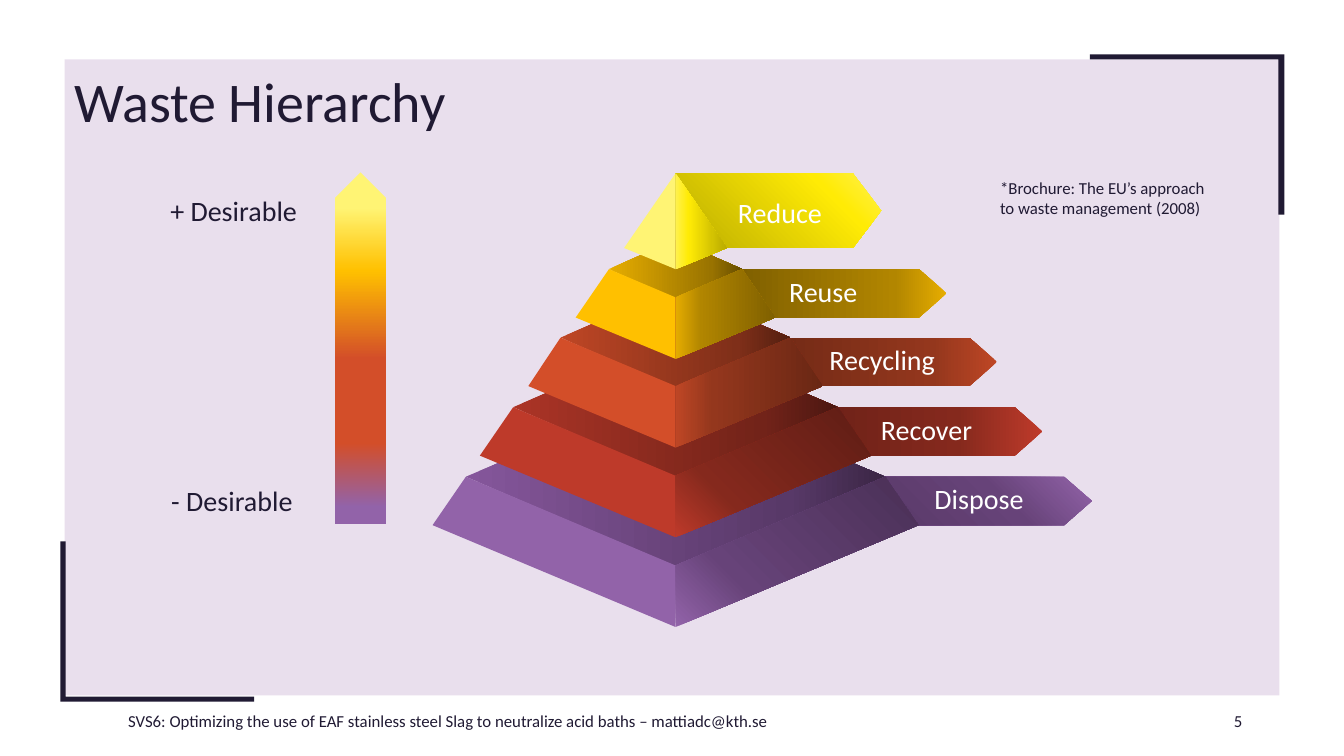
from dataclasses import dataclass

from lxml import etree
from pptx import Presentation
from pptx.dml.color import RGBColor
from pptx.enum.shapes import MSO_SHAPE
from pptx.enum.text import MSO_ANCHOR, MSO_AUTO_SIZE, PP_ALIGN
from pptx.oxml.ns import qn
from pptx.util import Inches, Pt

RECTANGLE, PENTAGON = MSO_SHAPE.RECTANGLE, MSO_SHAPE.PENTAGON
LEFT, CENTER, RIGHT = PP_ALIGN.LEFT, PP_ALIGN.CENTER, PP_ALIGN.RIGHT
TOP, MIDDLE = MSO_ANCHOR.TOP, MSO_ANCHOR.MIDDLE
GROW, FIXED = MSO_AUTO_SIZE.SHAPE_TO_FIT_TEXT, MSO_AUTO_SIZE.NONE

INK, WHITE, PURPLE = "201A33", "FFFFFF", "9263A9"
AXIS = 6.7  # horizontal centre of the pyramid

Point = tuple[float, float]
Box = tuple[float, float, float, float]


@dataclass
class Gradient:
    stops: list[tuple[int, str]]
    angle: int = 0  # clockwise degrees

    def turned(self, angle: int) -> "Gradient":
        return Gradient(self.stops, angle)


@dataclass
class Tier:
    name: str
    front: str
    side: Gradient
    lid: Gradient | None
    plate_angle: int
    plate: tuple[float, float, float]  # left, width, point adjustment
    label: tuple[float, float, float]  # left, top, width
    half_top: float
    half_base: float
    edge: float  # height of the upper outer corners
    rise: float  # drop from upper to lower outer corners
    back: float  # rear corner of the lid
    ridge: float  # upper end of the centre ridge
    foot: float  # lower end of the centre ridge


@dataclass
class Caption:
    lines: list[str]
    box: Box
    size: int
    align: PP_ALIGN = LEFT
    color: str = INK
    anchor: MSO_ANCHOR = TOP
    wrap: bool = False
    fit: MSO_AUTO_SIZE = GROW


TIERS = [
    Tier("Reduce", "FFF474", Gradient([(0, "FFF14F"), (25, "FFEB05"), (100, "BAAB00")]), None,
         135, (6.7, 2.04, 0.379), (7.21, 1.89, 1.05),
         0, 0.51, 1.72, 0.74, 1.72, 1.72, 2.67),
    Tier("Reuse", "FFC000", Gradient([(0, "E6AD00"), (25, "B28600"), (100, "806000")]),
         Gradient([(0, "E6AD00"), (77, "997300"), (100, "664D00")]),
         180, (7.35, 2.04, 0.575), (7.65, 2.67, 1.03),
         0.66, 0.99, 2.67, 0.48, 2.38, 2.95, 3.56),
    Tier("Recycling", "D34E29", Gradient([(0, "BE4625"), (25, "94371D"), (100, "6A2714")]),
         Gradient([(0, "BE4625"), (77, "7F2F19"), (100, "541F10")]),
         180, (7.35, 2.54, 0.575), (8.12, 3.35, 1.26),
         1.14, 1.46, 3.35, 0.48, 2.86, 3.83, 4.44),
    Tier("Recover", "BE3A2A", Gradient([(0, "BE3A2A"), (28, "85291D"), (100, "5F1D15")], 315),
         Gradient([(0, "AB3426"), (77, "722319"), (100, "4C1711")]),
         180, (7.35, 2.99, 0.575), (8.56, 4.04, 1.26),
         1.61, 1.94, 4.04, 0.48, 3.35, 4.72, 5.33),
    Tier("Dispose", PURPLE, Gradient([(0, PURPLE), (28, "674379"), (100, "4A3056")], 315),
         Gradient([(0, "85569B"), (77, "583968"), (100, "3B2645")]),
         135, (7.35, 3.48, 0.575), (9.11, 4.73, 1.2),
         2.08, 2.41, 4.73, 0.48, 3.85, 5.61, 6.22),
]

SCALE = Gradient([(10, "FFF474"), (28, "FFC000"), (53, "D34E29"), (77, "D34E29"), (95, PURPLE)], 180)

CORNERS = [
    [(12.74, 0.54), (10.81, 0.54), (10.81, 0.59), (12.68, 0.59), (12.68, 2.13), (12.74, 2.13)],
    [(0.6, 6.96), (2.52, 6.96), (2.52, 6.91), (0.65, 6.91), (0.65, 5.37), (0.6, 5.37)],
]

CAPTIONS = [
    Caption(["SVS6: Optimizing the use of EAF stainless steel Slag to neutralize acid baths – mattiadc@kth.se"],
            (0.92, 6.95, 7.05, 0.4), 12, CENTER, anchor=MIDDLE, wrap=True, fit=FIXED),
    Caption(["5"], (11.53, 6.95, 0.89, 0.4), 12, RIGHT, anchor=MIDDLE, wrap=True, fit=FIXED),
    Caption(["Waste Hierarchy"], (0.64, 0.61, 4.04, 0.77), 40),
    Caption(["+ Desirable"], (1.59, 1.87, 1.52, 0.44), 20),
    Caption(["- Desirable"], (1.6, 4.75, 1.45, 0.44), 20),
    Caption(["*Brochure: The EU’s approach", "to waste management (2008)"],
            (9.82, 1.71, 2.25, 0.71), 12),
]


def rgb(color: str) -> RGBColor:
    return RGBColor.from_string(color)


def paint(shape, fill: str | Gradient) -> None:
    shape.shadow.inherit = False
    shape.line.fill.background()
    if isinstance(fill, str):
        shape.fill.solid()
        shape.fill.fore_color.rgb = rgb(fill)
        return
    shape.fill.gradient()
    shape.fill.gradient_angle = (360 - fill.angle) % 360
    stop_list = shape._element.spPr.find(qn("a:gradFill")).find(qn("a:gsLst"))
    for old_stop in list(stop_list):
        stop_list.remove(old_stop)
    for position, color in fill.stops:
        stop = etree.SubElement(stop_list, qn("a:gs"), pos=str(position * 1000))
        etree.SubElement(stop, qn("a:srgbClr"), val=color)


def add_preset(page, kind: MSO_SHAPE, box: Box, fill: str | Gradient):
    shape = page.shapes.add_shape(kind, *map(Inches, box))
    paint(shape, fill)
    return shape


def add_outline(page, points: list[Point], fill: str | Gradient) -> None:
    corners = [(Inches(x), Inches(y)) for x, y in points]
    builder = page.shapes.build_freeform(*corners[0])
    builder.add_line_segments(corners[1:], close=True)
    paint(builder.convert_to_shape(), fill)


def add_caption(page, caption: Caption) -> None:
    frame = page.shapes.add_textbox(*map(Inches, caption.box)).text_frame
    layout = {"word_wrap": caption.wrap, "auto_size": caption.fit, "vertical_anchor": caption.anchor}
    for name, value in layout.items():
        setattr(frame, name, value)
    for index, line in enumerate(caption.lines):
        para = frame.add_paragraph() if index else frame.paragraphs[0]
        para.alignment = caption.align
        span = para.add_run()
        span.text = line
        for name, value in {"name": "Calibri", "size": Pt(caption.size)}.items():
            setattr(span.font, name, value)
        span.font.color.rgb = rgb(caption.color)


def add_pyramid(page) -> None:
    # Arrow plates behind the pyramid
    for tier in TIERS:
        left, width, point = tier.plate
        plate = add_preset(page, PENTAGON, (left, tier.edge, width, tier.rise),
                           tier.side.turned(tier.plate_angle))
        plate.adjustments[0] = point
    # Lids, lowest first
    for tier in reversed(TIERS):
        if tier.lid:
            add_outline(page, [(AXIS - tier.half_top, tier.edge), (AXIS, tier.back),
                               (AXIS + tier.half_top, tier.edge), (AXIS, tier.ridge)], tier.lid)
    # Front and side faces
    for tier in TIERS:
        base = tier.edge + tier.rise
        ridge, foot = (AXIS, tier.ridge), (AXIS, tier.foot)
        for direction, fill in ((-1, tier.front), (1, tier.side)):
            upper = (AXIS + direction * tier.half_top, tier.edge)
            lower = (AXIS + direction * tier.half_base, base)
            face = [ridge, upper, lower, foot] if tier.half_top else [ridge, lower, foot]
            add_outline(page, face, fill)
    # Tier names
    for tier in TIERS:
        left, top, width = tier.label
        add_caption(page, Caption([tier.name], (left, top, width, 0.44), 20, CENTER, WHITE))


def main() -> None:
    deck = Presentation()
    deck.slide_width, deck.slide_height = Inches(13.33), Inches(7.5)
    page = deck.slides.add_slide(deck.slide_layouts[6])

    # Tinted panel and corner brackets
    panel = add_preset(page, RECTANGLE, (0.64, 0.59, 12.05, 6.31), PURPLE)
    tint = panel._element.spPr.find(qn("a:solidFill")).find(qn("a:srgbClr"))
    etree.SubElement(tint, qn("a:alpha"), val="20000")
    for corner in CORNERS:
        add_outline(page, corner, INK)

    add_pyramid(page)

    # Desirability scale, pointing up
    add_preset(page, PENTAGON, (1.83, 3.2, 3.49, 0.51), SCALE).rotation = 270

    for caption in CAPTIONS:
        add_caption(page, caption)
    deck.save("out.pptx")


if __name__ == "__main__":
    main()
